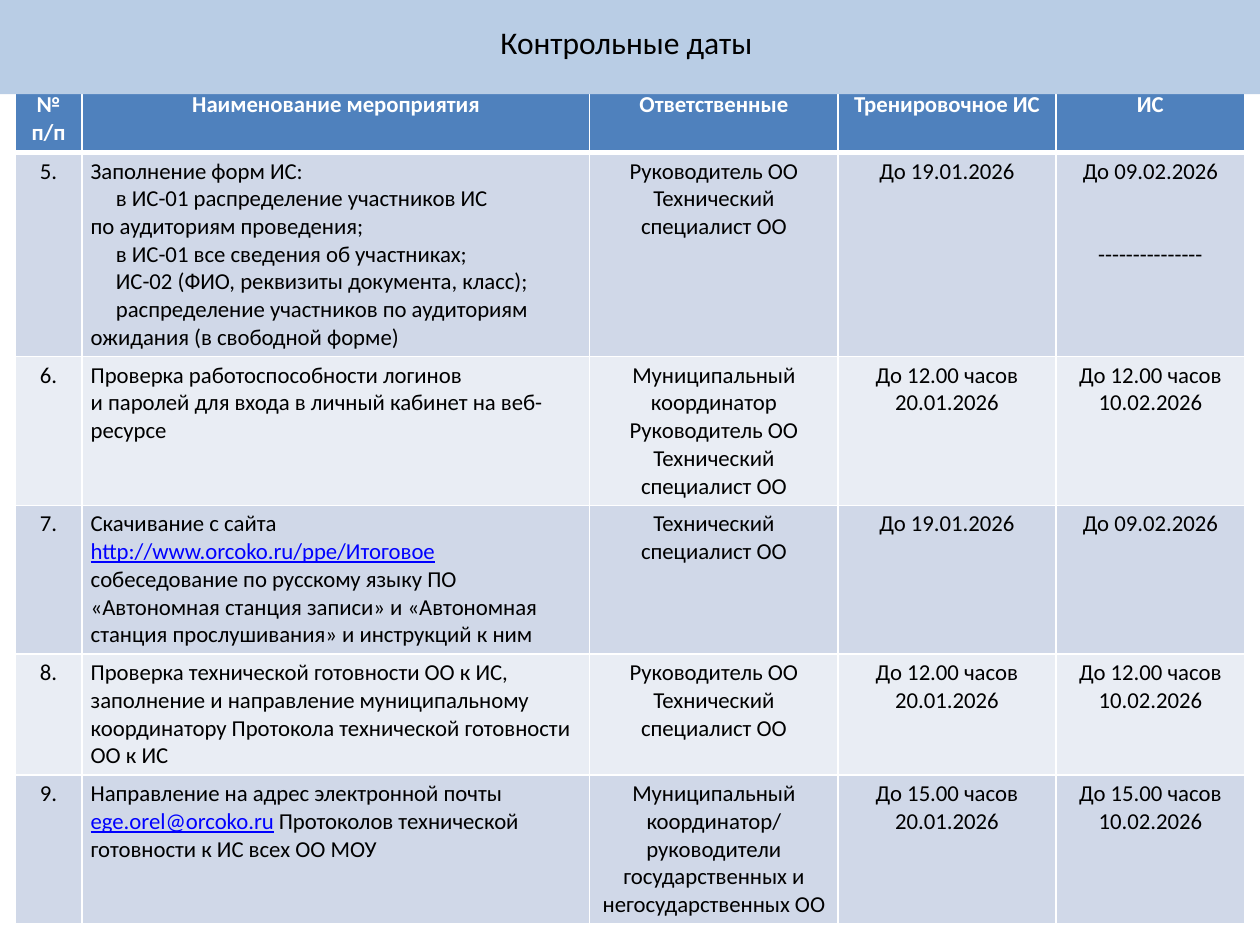
from lxml import etree
from pptx import Presentation
from pptx import util as u
from pptx.dml.color import RGBColor
from pptx.enum import shapes, text
from pptx.oxml.ns import qn

BLUE = RGBColor(0x4F, 0x81, 0xBD)
DARK_BLUE = RGBColor(0x3A, 0x5F, 0x8C)
LIGHT_BLUE = RGBColor(0xB9, 0xCD, 0xE5)
BANDS = (RGBColor(0xD0, 0xD8, 0xE8), RGBColor(0xE9, 0xED, 0xF4))
LINK_BLUE = RGBColor(0x00, 0x00, 0xFF)
WHITE = RGBColor(0xFF, 0xFF, 0xFF)
BLACK = RGBColor(0x00, 0x00, 0x00)
FONT = "Calibri"
SIZE = 13

TITLE = "Контрольные даты "
DASHES = "---------------"
HEADERS = ["№ п/п", "Наименование мероприятия", "Ответственные", "Тренировочное ИС", "ИС"]
FORM_ITEMS = [
    "в ИС-01 распределение участников ИС \vпо аудиториям проведения;",
    "в ИС-01 все сведения об участниках;",
    "ИС-02 (ФИО, реквизиты документа, класс);",
    "распределение участников по аудиториям ожидания (в свободной форме)",
]
HEAD = "Руководитель ОО"
TECHNICIAN = "Технический специалист ОО"
ROWS = [
    ("5.", ["Заполнение форм ИС:"] + FORM_ITEMS, [HEAD, TECHNICIAN],
     "До 19.01.2026", ["До 09.02.2026", DASHES]),
    ("6.", "Проверка работоспособности логинов \vи паролей для входа в личный кабинет на веб-ресурсе",
     ["Муниципальный координатор", HEAD, TECHNICIAN],
     "До 12.00 часов 20.01.2026", "До 12.00 часов 10.02.2026"),
    ("7.", [("Скачивание с сайта ", "http://www.orcoko.ru/ppe/Итоговое",
             " собеседование по русскому языку ПО «Автономная станция записи» и "
             "«Автономная станция прослушивания» и инструкций к ним")],
     TECHNICIAN, "До 19.01.2026", "До 09.02.2026"),
    ("8.", "Проверка технической готовности ОО к ИС, заполнение и направление муниципальному "
           "координатору Протокола технической готовности ОО к ИС",
     [HEAD, TECHNICIAN], "До 12.00 часов 20.01.2026", "До 12.00 часов 10.02.2026"),
    ("9.", [("Направление на адрес электронной почты ", "ege.orel@orcoko.ru",
             " Протоколов технической готовности к ИС всех ОО МОУ")],
     ["Муниципальный координатор/", "руководители государственных и негосударственных ОО"],
     "До 15.00 часов 20.01.2026", "До 15.00 часов 10.02.2026"),
]
COLUMN_WIDTHS = [0.53, 4.03, 1.97, 1.73, 1.5]
ROW_HEIGHTS = [0.53, 1.59, 1.16, 1.16, 0.94, 1.15]


def format_run(run, size, color, bold=False):
    run.font.name = FONT
    run.font.size = u.Pt(size)
    run.font.bold = bold
    run.font.color.rgb = color


def write_paragraph(paragraph, content, centered, color, bold):
    paragraph.alignment = text.PP_ALIGN.CENTER if centered else text.PP_ALIGN.LEFT
    if isinstance(content, tuple):
        for part in content:
            paragraph.add_run().text = part
    else:
        paragraph.text = content
    for line_break in paragraph._p.findall(qn("a:br")):
        etree.SubElement(line_break, qn("a:rPr"), sz=str(SIZE * 100))
    for run in paragraph.runs:
        format_run(run, SIZE, color, bold)
    if isinstance(content, tuple):
        link = paragraph.runs[1]
        link.font.color.rgb = LINK_BLUE
        link.font.underline = True
    if content in FORM_ITEMS:
        properties = paragraph._p.get_or_add_pPr()
        properties.set("marL", "0")
        properties.set("indent", str(u.Inches(0.2)))
    if content == DASHES:
        paragraph.space_before = u.Pt(32)


def add_borders(cell, widths):
    properties = cell._tc.get_or_add_tcPr()
    for side, width in zip("LRTB", widths):
        line = etree.SubElement(properties, qn("a:ln" + side), w=str(u.Pt(width)))
        fill = etree.SubElement(line, qn("a:solidFill"))
        etree.SubElement(fill, qn("a:srgbClr"), val=str(WHITE))


def fill_cell(cell, content, row, column):
    header = row == 0
    add_borders(cell, (1, 1, 3 if row == 1 else 1, 3 if header else 1))
    cell.fill.solid()
    cell.fill.fore_color.rgb = BLUE if header else BANDS[(row - 1) % 2]
    cell.margin_left = cell.margin_right = u.Inches(0.07)
    cell.margin_top = cell.margin_bottom = u.Inches(0.04)
    frame = cell.text_frame
    for index, item in enumerate(content if isinstance(content, list) else [content]):
        paragraph = frame.add_paragraph() if index else frame.paragraphs[0]
        write_paragraph(paragraph, item, header or column != 1, WHITE if header else BLACK, header)


def add_dates_table(slide):
    table = slide.shapes.add_table(
        len(ROW_HEIGHTS), len(COLUMN_WIDTHS), u.Inches(0.12), u.Inches(0.68),
        u.Inches(sum(COLUMN_WIDTHS)), u.Inches(sum(ROW_HEIGHTS))).table
    for column, width in zip(table.columns, COLUMN_WIDTHS):
        column.width = u.Inches(width)
    for row, height in zip(table.rows, ROW_HEIGHTS):
        row.height = u.Inches(height)
    for row, contents in enumerate([HEADERS] + ROWS):
        for column, content in enumerate(contents):
            fill_cell(table.cell(row, column), content, row, column)


def add_title_band(slide):
    band = slide.shapes.add_shape(
        shapes.MSO_SHAPE.RECTANGLE, 0, u.Inches(0.05), u.Inches(10), u.Inches(0.55))
    band.shadow.inherit = False
    band.fill.solid()
    band.fill.fore_color.rgb = BLUE
    band.line.color.rgb = DARK_BLUE
    band.line.width = u.Pt(2)

    title = slide.shapes.title
    title.left, title.top = 0, u.Inches(0.13)
    title.width, title.height = u.Inches(10), u.Inches(0.4)
    title.fill.solid()
    title.fill.fore_color.rgb = LIGHT_BLUE
    frame = title.text_frame
    frame.text = TITLE
    frame.word_wrap = True
    frame.auto_size = text.MSO_AUTO_SIZE.SHAPE_TO_FIT_TEXT
    frame.vertical_anchor = text.MSO_ANCHOR.MIDDLE
    frame.paragraphs[0].alignment = text.PP_ALIGN.CENTER
    format_run(frame.paragraphs[0].runs[0], 18, BLACK)
    band._element.addnext(title._element)


def main():
    presentation = Presentation()
    presentation.slide_width = u.Inches(10)
    presentation.slide_height = u.Inches(7.5)
    slide = presentation.slides.add_slide(presentation.slide_layouts[5])
    add_dates_table(slide)
    add_title_band(slide)
    presentation.save("out.pptx")


if __name__ == "__main__":
    main()
